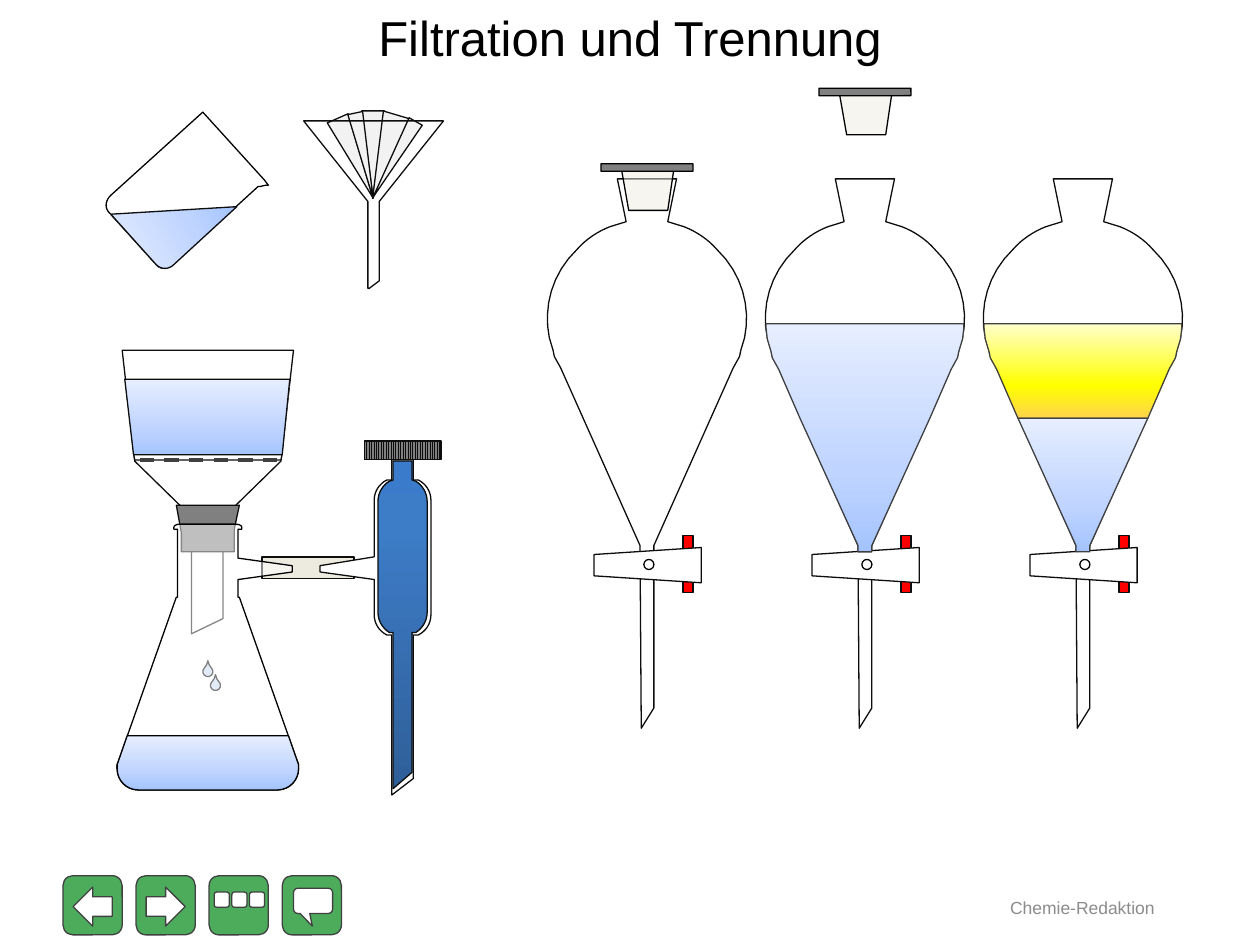
from dataclasses import dataclass

from lxml import etree
from pptx import Presentation
from pptx.dml.color import RGBColor
from pptx.enum.dml import MSO_LINE, MSO_PATTERN
from pptx.enum.shapes import MSO_CONNECTOR, MSO_SHAPE
from pptx.enum.text import MSO_ANCHOR, PP_ALIGN
from pptx.oxml.ns import qn
from pptx.util import Inches, Pt

DASH = MSO_LINE.DASH
STRIPES = MSO_PATTERN.LIGHT_VERTICAL
STRAIGHT = MSO_CONNECTOR.STRAIGHT
RECTANGLE, ROUNDED, OVAL = MSO_SHAPE.RECTANGLE, MSO_SHAPE.ROUNDED_RECTANGLE, MSO_SHAPE.OVAL
TRIANGLE, TRAPEZOID, TEAR = MSO_SHAPE.ISOSCELES_TRIANGLE, MSO_SHAPE.TRAPEZOID, MSO_SHAPE.TEAR
ARROW, CALLOUT = MSO_SHAPE.RIGHT_ARROW, MSO_SHAPE.ROUNDED_RECTANGULAR_CALLOUT
CENTER, MIDDLE = PP_ALIGN.CENTER, MSO_ANCHOR.MIDDLE


@dataclass(frozen=True)
class Theme:
    """Colours, gradients and type of the slide."""
    font: str = "Arial"
    title_size: float = 28
    footer_size: float = 10
    stroke: float = 0.75
    black: str = "000000"
    ink: str = "0D0D0D"
    edge: str = "404040"
    gray: str = "808080"
    footer: str = "8C8C8C"
    white: str = "FFFFFF"
    paper: str = "F2F2F2"
    hose: str = "DDD9C3"
    cork: str = "EEECE1"
    drop: str = "C6D9F1"
    red: str = "FF0000"
    green: str = "4DAC5C"
    water: tuple = ((0, "A4C4FF"), (35, "BFD4FF"), (100, "E6EEFF"))
    oil: tuple = ((0, "FFD44B"), (35, "FFFF00"), (100, "FFFFCC"))
    plug: tuple = ((0, "2F5F99"), (80, "3D7CC7"), (100, "3A7CCB"))


THEME = Theme()


def curve_points(steps, count=8):
    """Turn corner pairs and cubic curves (six numbers) into plain points."""
    points = []
    for step in steps:
        if len(step) == 2:
            points.append(step)
            continue
        controls = [points[-1], step[:2], step[2:4], step[4:]]
        for index in range(1, count + 1):
            t = index / count
            weights = ((1 - t) ** 3, 3 * t * (1 - t) ** 2, 3 * t * t * (1 - t), t ** 3)
            points.append(tuple(sum(w * c[axis] for w, c in zip(weights, controls)) for axis in (0, 1)))
    return points


def mirror(steps, axis):
    """Return the points reflected at a vertical axis, in reverse order."""
    return [(2 * axis - x, y) for x, y in reversed(curve_points(steps))]


def paint(shape, fill, line, alpha=100, angle=270):
    """Give a shape its solid or gradient fill and its thin line."""
    shape.shadow.inherit = False
    shape.line.color.rgb = RGBColor.from_string(line)
    shape.line.width = Pt(THEME.stroke)
    if fill is None:
        shape.fill.background()
    elif isinstance(fill, str):
        shape.fill.solid()
        shape.fill.fore_color.rgb = RGBColor.from_string(fill)
        if alpha < 100:
            color = shape.fill._xPr.find(qn("a:solidFill"))[0]
            etree.SubElement(color, qn("a:alpha"), val=str(alpha * 1000))
    else:
        shape.fill.gradient()
        gradient = shape.fill._xPr.find(qn("a:gradFill"))
        stops = gradient.find(qn("a:gsLst"))
        for stop in list(stops):
            stops.remove(stop)
        for position, color in fill:
            stop = etree.SubElement(stops, qn("a:gs"), pos=str(position * 1000))
            etree.SubElement(stop, qn("a:srgbClr"), val=color)
        gradient.find(qn("a:lin")).set("ang", str(angle * 60000))


class Box:
    """A group whose parts are placed from its left top corner, in inches."""

    def __init__(self, page, left, top):
        self.left, self.top = left, top
        self.shapes = page.shapes.add_group_shape().shapes

    def at(self, x, y):
        """Convert a position in the box to slide lengths."""
        return Inches(self.left + x), Inches(self.top + y)

    def outline(self, steps, fill, line=THEME.ink, **paint_options):
        """Draw a closed outline."""
        points = [self.at(x, y) for x, y in curve_points(steps)]
        builder = self.shapes.build_freeform(*points[0])
        builder.add_line_segments(points[1:], close=True)
        paint(builder.convert_to_shape(), fill, line, **paint_options)

    def preset(self, kind, x, y, width, height, fill, line=THEME.ink, rotation=0, adjust=(), **paint_options):
        """Draw a preset shape."""
        shape = self.shapes.add_shape(kind, *self.at(x, y), Inches(width), Inches(height))
        shape.rotation = rotation
        for index, value in enumerate(adjust):
            shape.adjustments[index] = value
        paint(shape, fill, line, **paint_options)
        return shape


def draw_beaker(box):
    """Draw the tilted beaker with water."""
    box.outline([(0.78, 0), (1.27, 0.54), (1.3, 0.58), (1.29, 0.58, 1.27, 0.58, 1.24, 0.59), (1.22, 0.59),
                 (0.54, 1.21), (0.5, 1.25, 0.44, 1.25, 0.41, 1.21), (0.03, 0.79),
                 (0, 0.75, 0.01, 0.7, 0.05, 0.66)], THEME.white, THEME.black)
    box.outline([(0.05, 0.81), (1.05, 0.75), (0.55, 1.21), (0.51, 1.25, 0.45, 1.25, 0.41, 1.21)],
                THEME.water, angle=150)


def draw_paper_funnel(box):
    """Draw the glass funnel with its folded paper filter."""
    folds = [(0.46, 0, 0.18, 0), (0.32, 0.03, 0.18, -23.9), (0.42, 0.01, 0.12, -11.8),
             (0.53, 0.02, 0.23, 16.5), (0.66, 0.04, 0.12, 29.4)]
    for x, y, width, lean in folds:
        box.preset(TRIANGLE, x, y, width, 0.69, THEME.paper, rotation=180 + lean)
    box.outline([(0, 0.08), (1.11, 0.08), (0.6, 0.72), (0.6, 1.35), (0.52, 1.41), (0.51, 1.41), (0.51, 0.72)], None)


def draw_suction_funnel(box):
    """Draw the suction funnel with filter plate, water and stopper."""
    box.outline([(0, 0), (1.36, 0), (1.26, 0.88), (0.8, 1.33), (0.8, 2.13), (0.55, 2.25), (0.55, 1.32),
                 (0.1, 0.88)], THEME.white)
    box.outline([(0.09, 0.82), (1.27, 0.82), (1.26, 0.87), (0.1, 0.87)], THEME.white)
    plate = box.shapes.add_connector(STRAIGHT, *box.at(0.14, 0.87), *box.at(1.28, 0.87))
    plate.line.color.rgb = RGBColor.from_string(THEME.edge)
    plate.line.width = Pt(2)
    plate.line.dash_style = DASH
    etree.SubElement(plate._element.spPr, qn("a:effectLst"))
    box.outline([(0.02, 0.23), (1.33, 0.23), (1.27, 0.83), (0.09, 0.83)], THEME.water)
    box.outline([(0.43, 1.23), (0.93, 1.23), (0.89, 1.42), (0.89, 1.6), (0.47, 1.6), (0.47, 1.45)], THEME.gray)


def draw_suction_flask(box):
    """Draw the flask with hose, falling drops and collected water."""
    axis = 0.72
    rim = [(0.93, 0), (0.97, 0, 0.99, 0.01, 0.99, 0.03), (0.99, 0.04), (0.96, 0.04)]
    arm = [(0.96, 0.27), (1.39, 0.33), (1.39, 0.38), (0.96, 0.44)]
    base = [(1.44, 1.91), (1.44, 1.94), (1.44, 2.03, 1.37, 2.11, 1.27, 2.11)]
    body = [(0.96, 0.58), (0.97, 0.58)] + base
    water = [(1.36, 1.68)] + base
    box.preset(RECTANGLE, 1.15, 0.26, 0.73, 0.17, THEME.hose, alpha=50)
    for x, y in ((0.68, 1.13), (0.74, 1.24)):
        box.preset(TEAR, x, y, 0.08, 0.08, THEME.drop, THEME.black, rotation=315, adjust=(1.518,))
    box.outline(rim + arm + body + mirror(body, axis) + mirror(rim, axis), THEME.white, THEME.black, alpha=50)
    box.outline(water + mirror(water, axis), THEME.water, THEME.black)


def draw_valve(box):
    """Draw the glass valve with its cap and blue core."""
    axis = 0.655
    arm = [(0.43, 1.1), (0, 1.04), (0, 0.99), (0.43, 0.92)]
    glass = ([(0.74, 0.15), (0.74, 0.31), (0.78, 0.31), (0.84, 0.34, 0.88, 0.4, 0.88, 0.47)],
             [(0.88, 1.38), (0.88, 1.45, 0.84, 1.51, 0.78, 1.54), (0.74, 1.54)],
             [(0.74, 2.68), (0.57, 2.81)], arm, THEME.white)
    core = ([(0.73, 0.16), (0.73, 0.31), (0.76, 0.32), (0.81, 0.35, 0.85, 0.41, 0.85, 0.48)],
            [(0.85, 1.36), (0.85, 1.43, 0.81, 1.49, 0.76, 1.52), (0.73, 1.52)],
            [(0.73, 2.63), (0.58, 2.76)], [], THEME.plug)
    for upper, lower, tip, side, fill in (glass, core):
        box.outline(upper + lower + tip + mirror(lower, axis) + side + mirror(upper, axis), fill)
    cap = box.preset(RECTANGLE, 0.35, 0, 0.61, 0.15, THEME.gray)
    cap.fill.patterned()
    cap.fill.pattern = STRIPES
    cap.fill.fore_color.rgb = RGBColor.from_string(THEME.ink)
    cap.fill.back_color.rgb = RGBColor.from_string(THEME.gray)


def draw_separating_funnel(box, phases):
    """Draw a separating funnel holding phases of (top, bottom, gradient)."""
    axis = 0.785
    half = [(1.02, 0), (0.95, 0.34), (1.08, 0.38), (1.18, 0.42, 1.27, 0.48, 1.34, 0.56),
            (1.54, 0.75, 1.61, 1.02, 1.56, 1.26), (1.53, 1.36), (1.52, 1.41), (1.47, 1.5), (0.84, 2.91)]
    wall = [(1.57, 1.15), (1.57, 1.18), (1.56, 1.27), (1.53, 1.37), (1.52, 1.42), (1.47, 1.51),
            (1.3, 1.9), (0.84, 2.91), (0.84, 2.96)]
    box.outline(half + [(0.84, 4.2), (0.74, 4.36)] + mirror(half, axis), THEME.white)
    box.preset(RECTANGLE, 1.07, 2.83, 0.08, 0.45, THEME.red)
    box.preset(TRAPEZOID, 0.65, 2.64, 0.28, 0.85, THEME.white, rotation=270, adjust=(0.198,))
    box.preset(OVAL, 0.76, 3.02, 0.08, 0.08, THEME.white, THEME.black)
    for top, bottom, gradient in phases:
        side = [point for point in wall if top <= point[1] <= bottom]
        box.outline(side + mirror(side, axis), gradient, THEME.edge)


def draw_stopper(box):
    """Draw a stopper with its flat lid."""
    box.outline([(0.16, 0.03), (0.58, 0.03), (0.53, 0.37), (0.22, 0.37)], THEME.cork, THEME.black, alpha=50)
    box.preset(ROUNDED, 0, 0, 0.73, 0.06, THEME.gray, THEME.black, adjust=(0.029,))


def draw_buttons(box):
    """Draw the row of four navigation buttons."""
    pitch = 0.58
    for index in range(4):
        box.preset(ROUNDED, index * pitch, 0, 0.47, 0.47, THEME.green, THEME.edge)
    for index, rotation in enumerate((180, 0)):
        box.preset(ARROW, index * pitch + 0.08, 0.09, 0.31, 0.31, THEME.white, THEME.edge, rotation=rotation)
    for index in range(3):
        box.preset(ROUNDED, 2 * pitch + 0.04 + index * 0.14, 0.13, 0.12, 0.12, THEME.white, THEME.edge)
    box.preset(CALLOUT, 3 * pitch + 0.09, 0.1, 0.31, 0.2, THEME.white, THEME.edge, adjust=(-0.019, 1.002, 0.167))


def write_text(shape, text, size, color, left, top, width, height):
    """Place a text shape and set its centred line."""
    shape.left, shape.top, shape.width, shape.height = map(Inches, (left, top, width, height))
    frame = shape.text_frame
    frame.text = text
    frame.word_wrap = True
    frame.vertical_anchor = MIDDLE
    para = frame.paragraphs[0]
    para.alignment = CENTER
    font = para.runs[0].font
    font.name, font.size = THEME.font, Pt(size)
    font.color.rgb = RGBColor.from_string(color)


def main():
    """Build the deck and save it."""
    deck = Presentation()
    deck.slide_width, deck.slide_height = Inches(10), Inches(7.5)
    page = deck.slides.add_slide(deck.slide_layouts[5])
    draw_buttons(Box(page, 0.5, 6.95))
    footer = page.shapes.add_textbox(0, 0, 0, 0)
    write_text(footer, "Chemie-Redaktion", THEME.footer_size, THEME.footer, 7.89, 7.06, 1.4, 0.28)
    write_text(page.shapes.title, "Filtration und Trennung", THEME.title_size, THEME.black, 0.5, 0, 9, 0.58)
    draw_suction_funnel(Box(page, 0.97, 2.78))
    draw_suction_flask(Box(page, 0.93, 4.16))
    draw_valve(Box(page, 2.54, 3.5))
    draw_beaker(Box(page, 0.83, 0.89))
    draw_paper_funnel(Box(page, 2.41, 0.88))
    fillings = [(), [(1.15, 2.96, THEME.water)], [(1.15, 1.9, THEME.oil), (1.9, 2.96, THEME.water)]]
    for index, phases in enumerate(fillings):
        draw_separating_funnel(Box(page, 4.35 + index * 1.73, 1.42), phases)
    for left, top in ((4.77, 1.3), (6.5, 0.7)):
        draw_stopper(Box(page, left, top))
    deck.save("out.pptx")


if __name__ == "__main__":
    main()
